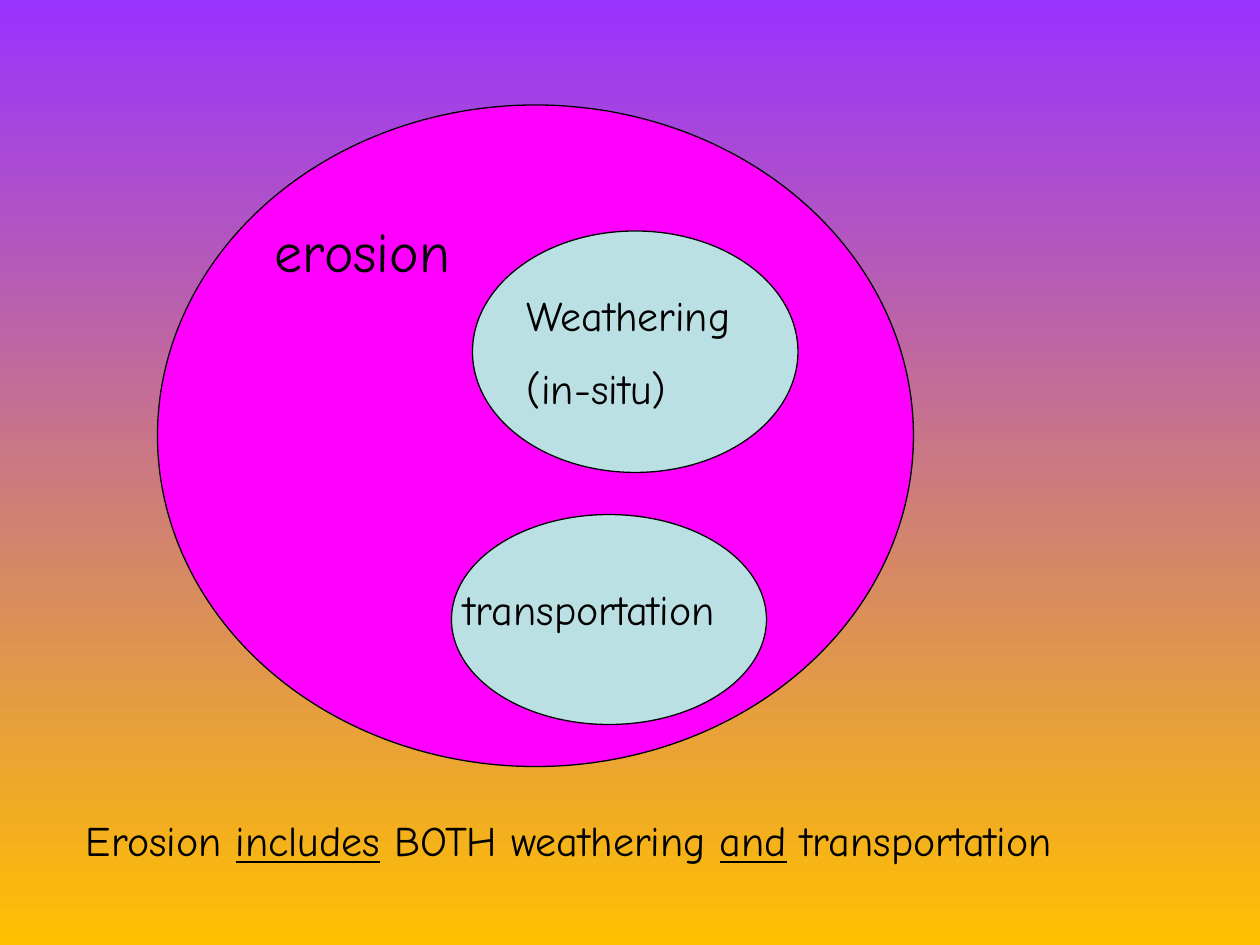
import pptx
import pptx.dml.color
import pptx.enum.shapes
import pptx.enum.text
import pptx.util


def color(hex_string):
    return pptx.dml.color.RGBColor.from_string(hex_string)


class DiagramSlide:
    """Holds the style and the slide; lengths are cells of a 120 by 90 grid."""

    cell = pptx.util.Inches(10) / 120
    ink = "000000"
    font_name = "Comic Neue"
    paragraph_gap = pptx.util.Pt(13)

    def __init__(self, deck):
        deck.slide_width = round(120 * self.cell)
        deck.slide_height = round(90 * self.cell)
        self.slide = deck.slides.add_slide(deck.slide_layouts[6])

    def place(self, *cells):
        return [round(count * self.cell) for count in cells]

    def background(self, top, bottom):
        fill = self.slide.background.fill
        fill.gradient()
        fill.gradient_angle = 270
        for stop, shade in zip(fill.gradient_stops, (top, bottom)):
            stop.color.rgb = color(shade)

    def ellipse(self, cells, shade):
        oval = self.slide.shapes.add_shape(
            pptx.enum.shapes.MSO_SHAPE.OVAL, *self.place(*cells))
        oval.shadow.inherit = False
        oval.fill.solid()
        oval.fill.fore_color.rgb = color(shade)
        oval.line.color.rgb = color(self.ink)
        oval.line.width = pptx.util.Pt(0.75)

    def text(self, cells, paragraphs, size=24):
        """Each paragraph is a list of (wording, underlined) pairs."""
        box = self.slide.shapes.add_textbox(*self.place(*cells))
        frame = box.text_frame
        frame.word_wrap = True
        frame.auto_size = pptx.enum.text.MSO_AUTO_SIZE.SHAPE_TO_FIT_TEXT
        for index, spans in enumerate(paragraphs):
            para = frame.add_paragraph() if index else frame.paragraphs[0]
            if index:
                para.space_before = self.paragraph_gap
            for wording, underlined in spans:
                span = para.add_run()
                span.text = wording
                span.font.color.rgb = color(self.ink)
                formats = {"name": self.font_name, "size": pptx.util.Pt(size),
                           "underline": underlined}
                for name, value in formats.items():
                    setattr(span.font, name, value)


def main():
    deck = pptx.Presentation()
    page = DiagramSlide(deck)
    page.background("9933FF", "FFC000")

    page.ellipse((15, 10, 72, 63), "FF00FF")
    page.text((25, 20, 32, 7.6), [[("erosion", False)]], size=32)

    for oval in ((45, 22, 31, 23), (43, 49, 30, 20)):
        page.ellipse(oval, "BBE0E3")
    page.text((49, 27, 25, 13.2), [[("Weathering", False)], [("(in-situ)", False)]])
    page.text((43, 55, 30, 6), [[("transportation", False)]])

    page.text((7, 77, 108, 6), [[
        ("Erosion ", False), ("includes", True), (" BOTH weathering ", False),
        ("and", True), (" transportation", False)]])
    deck.save("out.pptx")


if __name__ == "__main__":
    main()
